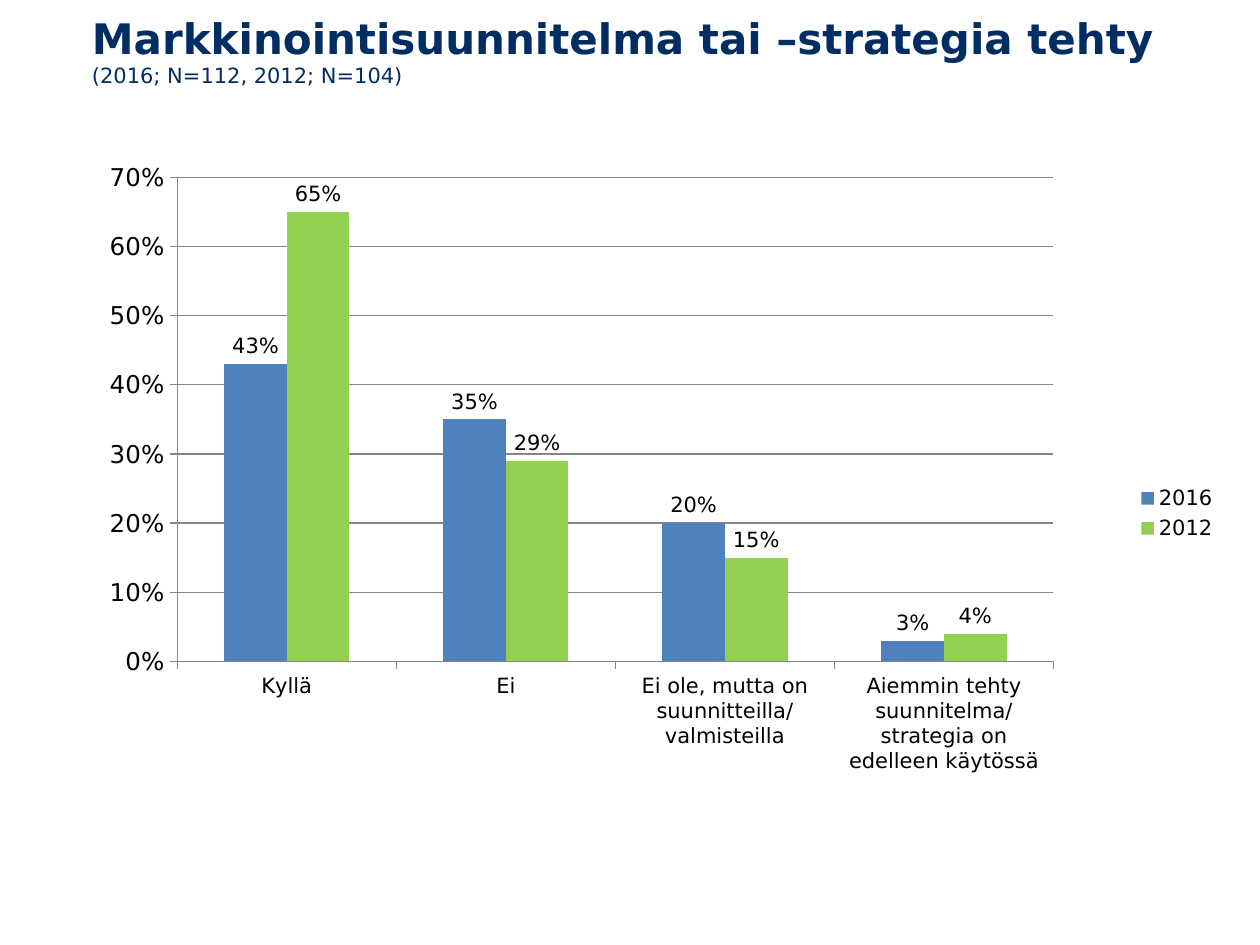
import pptx
import pptx.chart.data
import pptx.dml.color
import pptx.enum.chart
import pptx.enum.text
import pptx.oxml
import pptx.oxml.ns
import pptx.util

Inches = pptx.util.Inches
Pt = pptx.util.Pt
RGBColor = pptx.dml.color.RGBColor

NAVY = RGBColor(0x00, 0x2D, 0x62)
BLUE = RGBColor(0x4F, 0x81, 0xBD)
GREEN = RGBColor(0x92, 0xD0, 0x50)
GRAY = RGBColor(0x86, 0x86, 0x86)
BLACK = RGBColor(0, 0, 0)
FONT = "DejaVu Sans"

deck = pptx.Presentation()
deck.slide_width = Inches(10)
deck.slide_height = Inches(7.5)
slide = deck.slides.add_slide(deck.slide_layouts[5])

title = slide.shapes.title
title.left, title.top = Inches(0.73), Inches(0.1)
title.width, title.height = Inches(8.53), Inches(0.61)
frame = title.text_frame
frame.margin_left = frame.margin_right = 0
frame.margin_top = frame.margin_bottom = 0
frame.word_wrap = True
frame.auto_size = pptx.enum.text.MSO_AUTO_SIZE.SHAPE_TO_FIT_TEXT
frame.vertical_anchor = pptx.enum.text.MSO_ANCHOR.TOP
para = frame.paragraphs[0]
para.alignment = pptx.enum.text.PP_ALIGN.LEFT
para.font.name = FONT
para.font.color.rgb = NAVY
head = para.add_run()
head.text = "Markkinointisuunnitelma tai –strategia tehty"
head.font.size = Pt(24)
head.font.bold = True
para.add_line_break()
note = para.add_run()
note.text = "(2016; N=112, 2012; N=104)"
note.font.size = Pt(12)
note.font.bold = False

data = pptx.chart.data.CategoryChartData(number_format="0%")
data.categories = [
    "Kyllä",
    "Ei",
    "Ei ole, mutta on suunnitteilla/valmisteilla",
    "Aiemmin tehty suunnitelma/strategia on edelleen käytössä",
]
data.add_series("2016", (0.43, 0.35, 0.2, 0.03))
data.add_series("2012", (0.65, 0.29, 0.15, 0.04))
chart = slide.shapes.add_chart(
    pptx.enum.chart.XL_CHART_TYPE.COLUMN_CLUSTERED,
    Inches(0.5), Inches(1.25), Inches(9.26), Inches(5.65), data,
).chart
chart.has_title = False
chart.font.name = FONT
chart.font.size = Pt(12)
chart.font.color.rgb = BLACK
chart.has_legend = True
chart.legend.position = pptx.enum.chart.XL_LEGEND_POSITION.RIGHT
chart.legend.include_in_layout = False

plot = chart.plots[0]
plot.gap_width = 150
plot.overlap = 0
plot.vary_by_categories = False
for series, color in zip(plot.series, (BLUE, GREEN)):
    series.format.fill.solid()
    series.format.fill.fore_color.rgb = color
    labels = series.data_labels
    labels.show_value = True
    labels.number_format = "0%"
    labels.number_format_is_linked = False
    labels.position = pptx.enum.chart.XL_LABEL_POSITION.OUTSIDE_END

scale = chart.value_axis
scale.minimum_scale, scale.maximum_scale = 0, 0.7
scale.major_unit = 0.1
scale.tick_labels.font.size = Pt(14)
scale.tick_labels.number_format = "0%"
scale.tick_labels.number_format_is_linked = False
scale.has_major_gridlines = True
for axis in (scale, chart.category_axis):
    axis.major_tick_mark = pptx.enum.chart.XL_TICK_MARK.OUTSIDE
    axis.minor_tick_mark = pptx.enum.chart.XL_TICK_MARK.NONE
for part in (scale, chart.category_axis, scale.major_gridlines):
    part.format.line.color.rgb = GRAY
    part.format.line.width = Pt(0.75)

area = chart._chartSpace.chart.plotArea
for old in area.findall(pptx.oxml.ns.qn("c:layout")):
    area.remove(old)
area.insert(0, pptx.oxml.parse_xml(
    f'<c:layout {pptx.oxml.ns.nsdecls("c")}><c:manualLayout>'
    '<c:layoutTarget val="inner"/><c:xMode val="edge"/><c:yMode val="edge"/>'
    '<c:x val="0.098"/><c:y val="0.028"/><c:w val="0.751"/><c:h val="0.68"/>'
    '</c:manualLayout></c:layout>'
))

deck.save("out.pptx")
